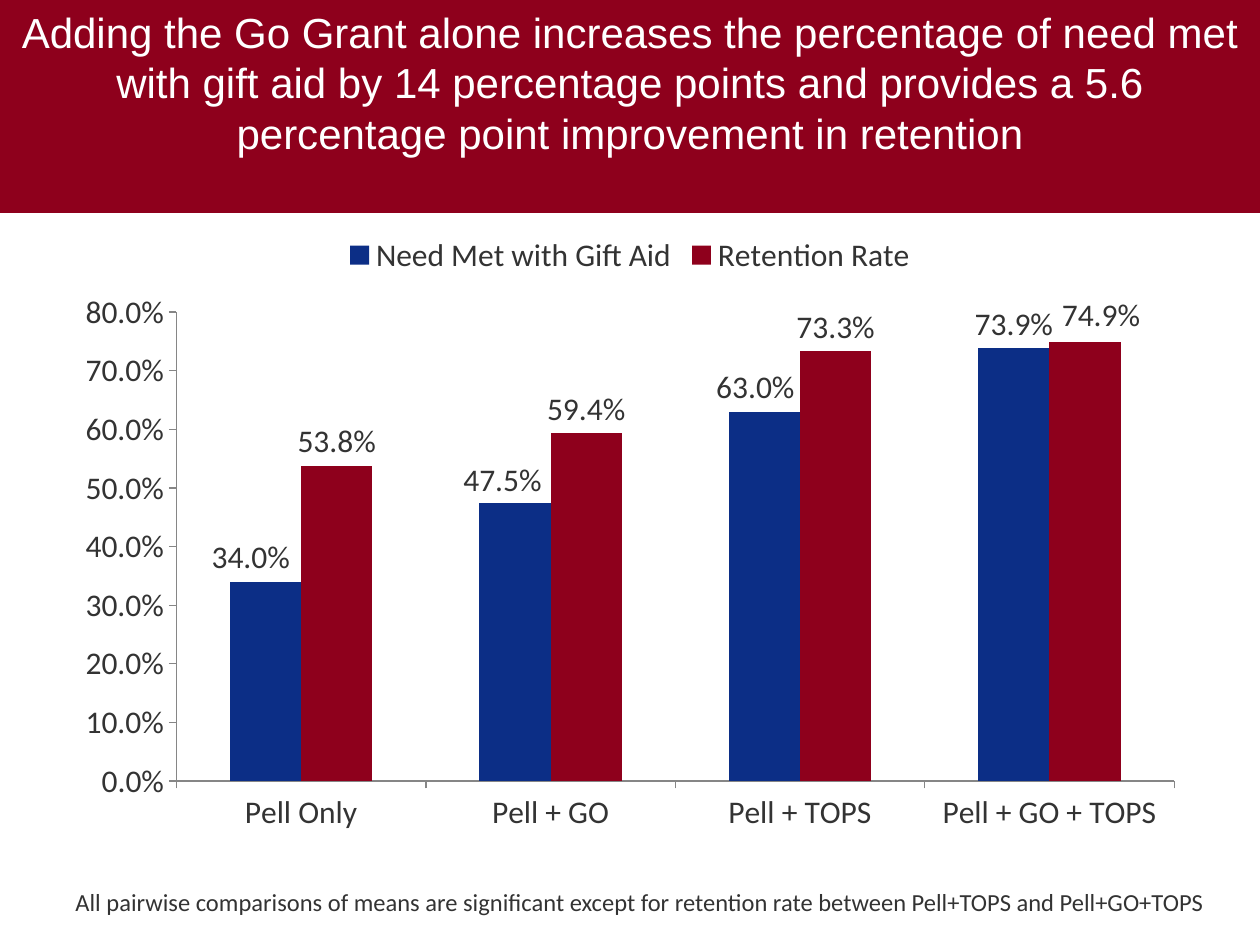
"""Build a slide comparing need met and retention rate by aid package."""
from dataclasses import dataclass

from lxml import etree
from pptx import Presentation
from pptx.chart.data import CategoryChartData
from pptx.dml.color import RGBColor
from pptx.enum.chart import XL_CHART_TYPE, XL_LABEL_POSITION, XL_LEGEND_POSITION, XL_TICK_MARK
from pptx.enum.text import MSO_ANCHOR, MSO_AUTO_SIZE, PP_ALIGN
from pptx.oxml.ns import qn
from pptx.util import Inches, Pt

COLUMNS = XL_CHART_TYPE.COLUMN_CLUSTERED
LABEL_ABOVE = XL_LABEL_POSITION.OUTSIDE_END
LEGEND_TOP = XL_LEGEND_POSITION.TOP
TICK_OUTSIDE = XL_TICK_MARK.OUTSIDE
ANCHOR_TOP = MSO_ANCHOR.TOP
CENTER = PP_ALIGN.CENTER

CRIMSON = "8E001C"
NAVY = "0C2E86"
DARK_GRAY = "333333"
AXIS_GRAY = "868686"
WHITE = "FFFFFF"
PERCENT = "0.0%"


@dataclass
class RateSeries:
    name: str
    values: tuple[float, ...]
    color: str
    label_shifts: dict[int, tuple[float, float]]


CATEGORIES = ("Pell Only", "Pell + GO", "Pell + TOPS", "Pell + GO + TOPS")
RATES = (
    RateSeries("Need Met with Gift Aid", (0.34, 0.475, 0.63, 0.739), NAVY,
               {0: (-0.013, 0), 1: (-0.011, 0.003), 2: (-0.008, 0)}),
    RateSeries("Retention Rate", (0.538, 0.594, 0.733, 0.749), CRIMSON,
               {3: (0.014, -0.005)}),
)


def rgb(color: str) -> RGBColor:
    """Turn a hex string into a colour."""
    return RGBColor.from_string(color)


def style_font(font, name: str, size: float, color: str) -> None:
    """Set typeface, size and colour of a font."""
    font.name = name
    font.size = Pt(size)
    font.color.rgb = rgb(color)


def manual_layout(**values) -> etree._Element:
    """Return a chart layout element holding the given settings in order."""
    layout = etree.Element(qn("c:layout"))
    manual = etree.SubElement(layout, qn("c:manualLayout"))
    for tag, value in values.items():
        etree.SubElement(manual, qn(f"c:{tag}")).set("val", str(value))
    return layout


def add_title(slide, text: str) -> None:
    """Fill the title placeholder as a crimson banner."""
    title = slide.shapes.title
    title.left, title.top = Inches(0), Inches(0)
    title.width, title.height = Inches(10), Inches(1.69)
    title.fill.solid()
    title.fill.fore_color.rgb = rgb(CRIMSON)
    frame = title.text_frame
    frame.text = text
    frame.word_wrap = True
    frame.auto_size = MSO_AUTO_SIZE.NONE
    frame.vertical_anchor = ANCHOR_TOP
    paragraph = frame.paragraphs[0]
    paragraph.alignment = CENTER
    style_font(paragraph.runs[0].font, "Arial", 24, WHITE)


def style_series(series, rate: RateSeries) -> None:
    """Colour one series and place its labels."""
    series.format.fill.solid()
    series.format.fill.fore_color.rgb = rgb(rate.color)
    series.invert_if_negative = False
    labels = series.data_labels
    labels.show_value = True
    labels.number_format = PERCENT
    labels.number_format_is_linked = False
    labels.position = LABEL_ABOVE
    style_font(labels.font, "Calibri", 18, DARK_GRAY)
    for index, (x, y) in rate.label_shifts.items():
        label = series.points[index].data_label
        label.position = LABEL_ABOVE
        style_font(label.font, "Calibri", 18, DARK_GRAY)
    for element in series._element.iter(qn("c:dLbl")):
        position = element.find(qn("c:idx"))
        x, y = rate.label_shifts[int(position.get("val"))]
        position.addnext(manual_layout(x=x, y=y))


def add_rate_chart(slide) -> None:
    """Add the clustered column chart."""
    data = CategoryChartData(number_format=PERCENT)
    data.categories = CATEGORIES
    for rate in RATES:
        data.add_series(rate.name, rate.values)
    chart = slide.shapes.add_chart(
        COLUMNS, Inches(0.5), Inches(1.75), Inches(9), Inches(4.95), data).chart
    style_font(chart.font, "Calibri", 18, DARK_GRAY)
    chart.has_title = False
    chart.has_legend = True
    chart.legend.position = LEGEND_TOP
    chart.legend.include_in_layout = False

    for axis in (chart.category_axis, chart.value_axis):
        axis.has_major_gridlines = False
        axis.major_tick_mark = TICK_OUTSIDE
        axis.format.line.color.rgb = rgb(AXIS_GRAY)
    value_axis = chart.value_axis
    value_axis.minimum_scale, value_axis.maximum_scale = 0, 0.8
    value_axis.major_unit = 0.1
    value_axis.tick_labels.number_format = PERCENT
    value_axis.tick_labels.number_format_is_linked = False

    plot = chart.plots[0]
    plot.vary_by_categories = False
    plot.gap_width, plot.overlap = 150, 0
    for series, rate in zip(plot.series, RATES):
        style_series(series, rate)

    plot_area = chart._chartSpace.find(f".//{qn('c:plotArea')}")
    for layout in plot_area.findall(qn("c:layout")):
        plot_area.remove(layout)
    plot_area.insert(0, manual_layout(
        layoutTarget="inner", xMode="edge", yMode="edge", x=0.1, y=0.147, w=0.88, h=0.752))


def add_note(slide, text: str) -> None:
    """Add the significance note below the chart."""
    box = slide.shapes.add_textbox(Inches(0.5), Inches(6.99), Inches(9.25), Inches(0.34))
    frame = box.text_frame
    frame.text = text
    frame.word_wrap = False
    frame.auto_size = MSO_AUTO_SIZE.SHAPE_TO_FIT_TEXT
    style_font(frame.paragraphs[0].runs[0].font, "Calibri", 14, DARK_GRAY)


def main() -> None:
    """Create the presentation and save it."""
    presentation = Presentation()
    presentation.slide_width, presentation.slide_height = Inches(10), Inches(7.5)
    slide = presentation.slides.add_slide(presentation.slide_layouts[5])
    add_title(slide, "Adding the Go Grant alone increases the percentage of need met "
                     "with gift aid by 14 percentage points and provides a 5.6 "
                     "percentage point improvement in retention")
    add_rate_chart(slide)
    add_note(slide, "All pairwise comparisons of means are significant except for "
                    "retention rate between Pell+TOPS and Pell+GO+TOPS")
    presentation.save("out.pptx")


if __name__ == "__main__":
    main()
